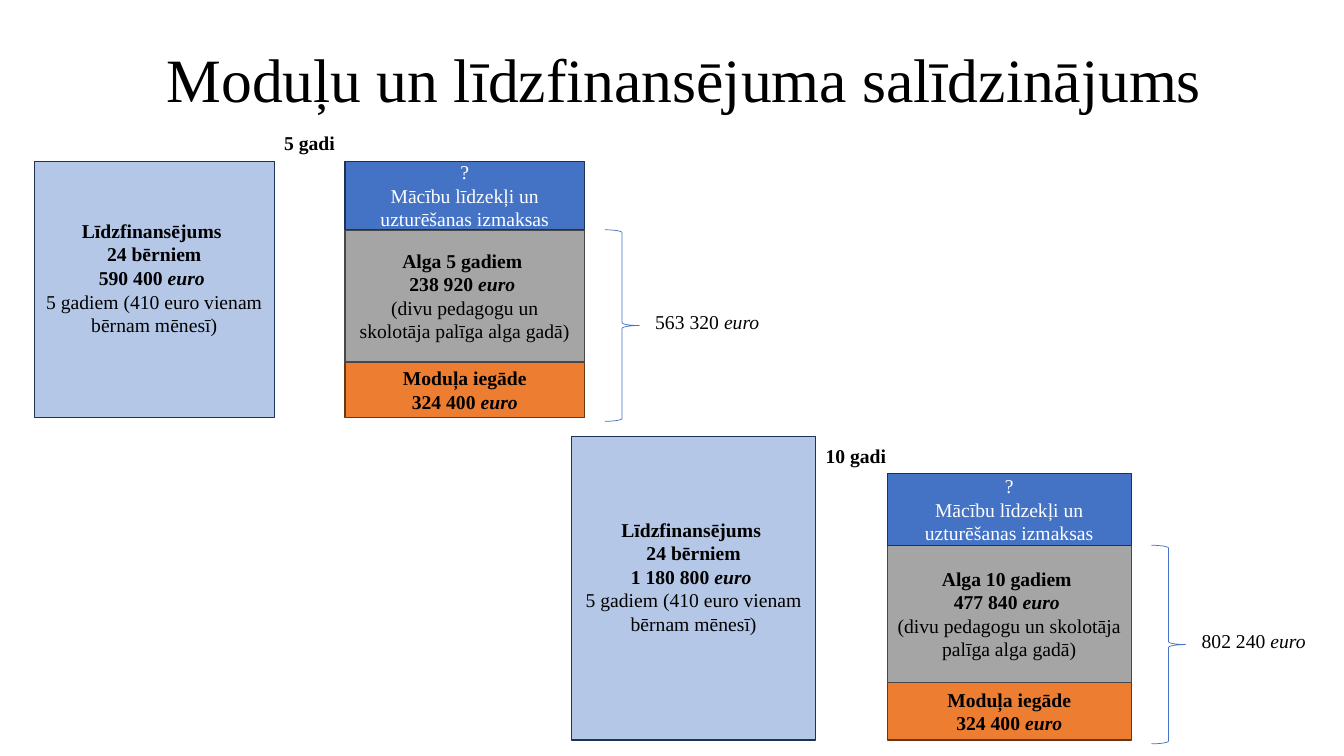
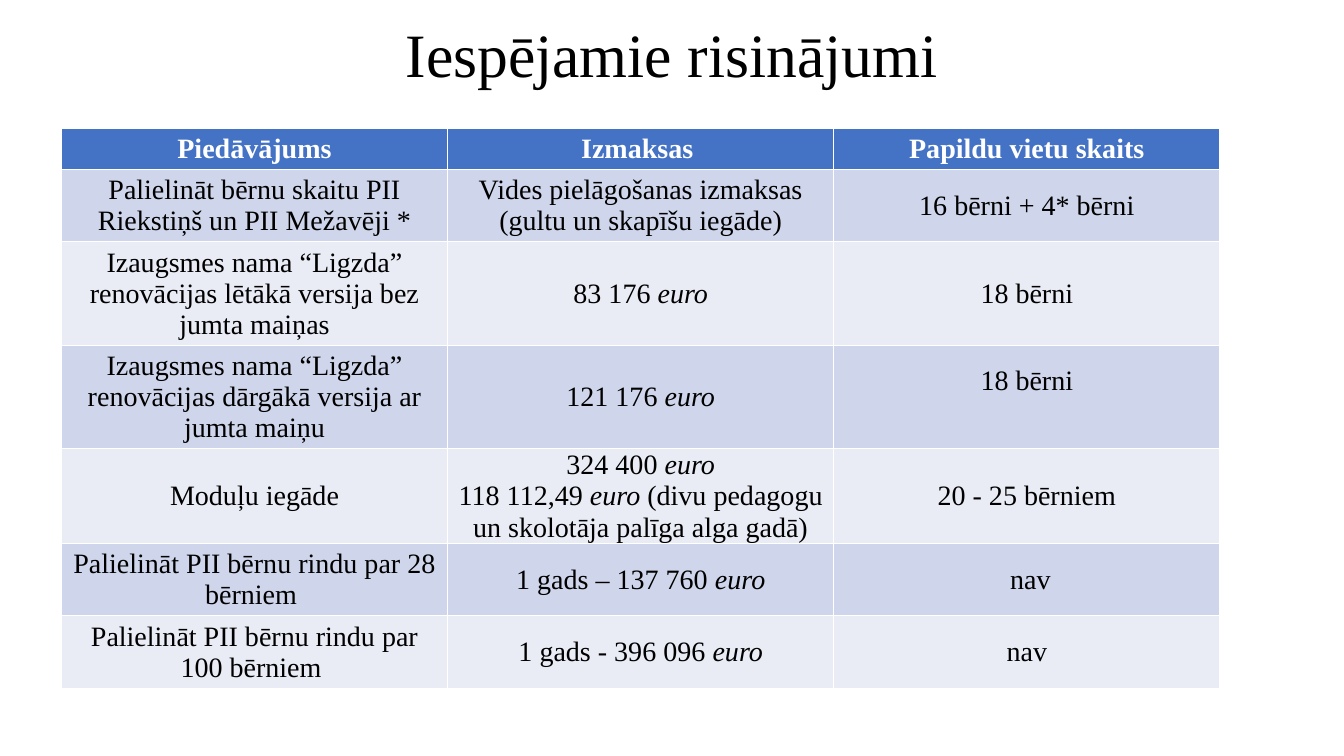
import dataclasses
import typing

import pptx
import pptx.dml.color
import pptx.enum.shapes
import pptx.enum.text
import pptx.util

EMU_PER_PX = 9144  # 100 px to the inch
FONT = "Times New Roman"
COLORS = {
    "white": "FFFFFF",
    "black": "000000",
    "light blue": "B4C7E7",
    "blue": "4472C4",
    "dark blue": "1E3256",
    "gray": "A5A5A5",
    "dark gray": "484848",
    "orange": "ED7D31",
    "brown": "683715",
    "odd row": "CFD5EA",
    "even row": "E9EBF5",
}
MIDDLE = pptx.enum.text.MSO_ANCHOR.MIDDLE
CENTER = pptx.enum.text.PP_ALIGN.CENTER
LEFT = pptx.enum.text.PP_ALIGN.LEFT
SHAPES = pptx.enum.shapes.MSO_SHAPE


def px(length: float) -> pptx.util.Emu:
    return pptx.util.Emu(round(length * EMU_PER_PX))


def rgb(name: str) -> pptx.dml.color.RGBColor:
    return pptx.dml.color.RGBColor.from_string(COLORS[name])


class Box(typing.NamedTuple):
    left: int
    top: int
    width: int
    height: int

    def emu(self) -> list[pptx.util.Emu]:
        return [px(length) for length in self]


@dataclasses.dataclass(frozen=True)
class Line:
    """One paragraph; the parts between underscores are italic."""
    text: str
    bold: bool = False


@dataclasses.dataclass(frozen=True)
class TextStyle:
    size: int = 14
    color: str = "black"
    alignment: typing.Any = CENTER
    line_spacing: float = 1.0


@dataclasses.dataclass(frozen=True)
class Layer:
    height: int
    fill: str
    outline: str
    lines: list[Line]
    text_color: str = "black"


@dataclasses.dataclass(frozen=True)
class Comparison:
    """Co-financing block beside the stacked costs of the module."""
    period: str
    funding: Box
    gap: int
    stack_top: int
    layer_heights: tuple[int, int, int]
    funding_sum: str
    salary_title: str
    salary_sum: str
    total: str


@dataclasses.dataclass(frozen=True)
class Cell:
    lines: list[Line]
    margins: dict[str, int] = dataclasses.field(default_factory=dict)


TITLE_STYLE = TextStyle(size=44, line_spacing=0.9)
BLOCK_STYLE = TextStyle()
LABEL_STYLE = TextStyle(alignment=LEFT)
HEADER_STYLE = TextStyle(size=20, color="white")
BODY_STYLE = TextStyle(size=20)

COMPARISONS = [
    Comparison("5 gadi", Box(34, 160, 238, 254), 70, 160, (68, 131, 55),
               "590 400", "Alga 5 gadiem ", "238 920", "563 320"),
    Comparison("10 gadi", Box(567, 433, 242, 301), 71, 470, (71, 136, 57),
               "1 180 800", "Alga 10 gadiem ", "477 840", "802 240"),
]


def plain(text: str, **margins: int) -> Cell:
    return Cell([Line(text)], margins)


TABLE_BOX = Box(61, 127, 1149, 555)
ROW_HEIGHTS = [41, 72, 102, 102, 94, 72, 72]
TABLE_ROWS = [
    [Cell([Line(heading, True)])
     for heading in ("Piedāvājums", "Izmaksas ", "Papildu vietu skaits")],
    [plain("Palielināt bērnu skaitu PII Riekstiņš un PII Mežavēji *"),
     plain("Vides pielāgošanas izmaksas (gultu un skapīšu iegāde)"),
     plain("16 bērni + 4* bērni")],
    [plain("Izaugsmes nama “Ligzda” renovācijas lētākā versija bez jumta maiņas"),
     plain("83 176 _euro_"),
     plain("18 bērni")],
    [plain("Izaugsmes nama “Ligzda” renovācijas dārgākā versija ar jumta maiņu"),
     plain("121 176 _euro_"),
     plain("18 bērni", margin_bottom=36)],
    [plain("Moduļu iegāde"),
     Cell([Line("324 400 _euro_"),
           Line("118 112,49 _euro_ (divu pedagogu un skolotāja palīga alga gadā)")],
          {"margin_left": 1, "margin_top": 1, "margin_right": 1, "margin_bottom": 0}),
     plain("20 - 25 bērniem")],
    [plain("Palielināt PII bērnu rindu par 28 bērniem "),
     plain("1 gads – 137 760 _euro_"),
     plain(" nav")],
    [plain("Palielināt PII bērnu rindu par 100 bērniem "),
     plain("1 gads - 396 096 _euro_"),
     plain("nav")],
]


def apply_format(target: typing.Any, values: dict[str, typing.Any]) -> None:
    for name, value in values.items():
        setattr(target, name, value)


def write_lines(frame: typing.Any, lines: list[Line], style: TextStyle) -> None:
    for index, line in enumerate(lines):
        paragraph = frame.add_paragraph() if index else frame.paragraphs[0]
        apply_format(paragraph, {"alignment": style.alignment,
                                 "line_spacing": style.line_spacing})
        for position, text in enumerate(line.text.split("_")):
            if not text:
                continue
            run = paragraph.add_run()
            run.text = text
            apply_format(run.font, {"name": FONT, "size": pptx.util.Pt(style.size),
                                    "bold": line.bold, "italic": position % 2 == 1})
            run.font.color.rgb = rgb(style.color)


def add_titled_slide(presentation: typing.Any, title: str, box: Box) -> typing.Any:
    slide = presentation.slides.add_slide(presentation.slide_layouts[5])
    shape = slide.shapes.title
    apply_format(shape, dict(zip(("left", "top", "width", "height"), box.emu())))
    apply_format(shape.text_frame, {"auto_size": pptx.enum.text.MSO_AUTO_SIZE.NONE,
                                    "vertical_anchor": MIDDLE, "word_wrap": True})
    write_lines(shape.text_frame, [Line(title)], TITLE_STYLE)
    return slide


def add_outlined(slide: typing.Any, preset: typing.Any, box: Box,
                 outline: str, weight: float) -> typing.Any:
    shape = slide.shapes.add_shape(preset, *box.emu())
    shape.shadow.inherit = False
    shape.line.color.rgb = rgb(outline)
    shape.line.width = pptx.util.Pt(weight)
    return shape


def add_block(slide: typing.Any, box: Box, layer: Layer, bottom_inset: int = 5) -> None:
    shape = add_outlined(slide, SHAPES.RECTANGLE, box, layer.outline, 1)
    shape.fill.solid()
    shape.fill.fore_color.rgb = rgb(layer.fill)
    apply_format(shape.text_frame, {"word_wrap": True, "vertical_anchor": MIDDLE,
                                    "margin_bottom": px(bottom_inset)})
    write_lines(shape.text_frame, layer.lines,
                dataclasses.replace(BLOCK_STYLE, color=layer.text_color))


def add_label(slide: typing.Any, box: Box, line: Line) -> None:
    frame = slide.shapes.add_textbox(*box.emu()).text_frame
    frame.word_wrap = True
    write_lines(frame, [line], LABEL_STYLE)


def add_comparison(slide: typing.Any, comparison: Comparison) -> None:
    funding = comparison.funding
    add_block(slide, funding, Layer(funding.height, "light blue", "dark blue", [
        Line("Līdzfinansējums ", True),
        Line("24 bērniem", True),
        Line(f"{comparison.funding_sum} _euro _", True),
        Line("5 gadiem (410 euro vienam bērnam mēnesī)"),
    ]), bottom_inset=28)

    upkeep, salary, purchase = comparison.layer_heights
    layers = [
        Layer(purchase, "orange", "brown", [
            Line("Moduļa iegāde", True), Line("324 400 _euro_", True)]),
        Layer(salary, "gray", "dark gray", [
            Line(comparison.salary_title, True),
            Line(f"{comparison.salary_sum} _euro _", True),
            Line("(divu pedagogu un skolotāja palīga alga gadā)")]),
        Layer(upkeep, "blue", "dark blue", [
            Line("?"), Line("Mācību līdzekļi un uzturēšanas izmaksas")], "white"),
    ]
    funding_right = funding.left + funding.width
    stack_left = funding_right + comparison.gap
    layer_top = funding.top + funding.height
    for layer in layers:
        layer_top -= layer.height
        add_block(slide, Box(stack_left, layer_top, funding.width, layer.height), layer)

    brace = Box(stack_left + funding.width + 20, comparison.stack_top + upkeep,
                34, salary + purchase + 4)
    add_outlined(slide, SHAPES.RIGHT_BRACE, brace, "blue", 0.5).fill.background()
    add_label(slide, Box(brace.left + 40, brace.top + brace.height // 2 - 20, 150, 34),
              Line(f"{comparison.total} _euro_"))
    add_label(slide, Box(funding_right, comparison.stack_top - 35, 203, 35),
              Line(comparison.period, True))


def add_solutions_table(slide: typing.Any) -> None:
    table = slide.shapes.add_table(len(TABLE_ROWS), len(TABLE_ROWS[0]),
                                   *TABLE_BOX.emu()).table
    for row_index, (height, cells) in enumerate(zip(ROW_HEIGHTS, TABLE_ROWS)):
        table.rows[row_index].height = px(height)
        if row_index == 0:
            fill, style = "blue", HEADER_STYLE
        else:
            fill, style = ("odd row" if row_index % 2 else "even row"), BODY_STYLE
        for column_index, content in enumerate(cells):
            cell = table.cell(row_index, column_index)
            cell.fill.solid()
            cell.fill.fore_color.rgb = rgb(fill)
            cell.vertical_anchor = MIDDLE
            apply_format(cell, {side: px(size) for side, size in content.margins.items()})
            write_lines(cell.text_frame, content.lines, style)


def main() -> None:
    presentation = pptx.Presentation()
    apply_format(presentation, {"slide_width": px(1333), "slide_height": px(750)})

    comparison_slide = add_titled_slide(
        presentation, "Moduļu un līdzfinansējuma salīdzinājums", Box(104, 9, 1150, 145))
    for comparison in COMPARISONS:
        add_comparison(comparison_slide, comparison)

    solutions_slide = add_titled_slide(
        presentation, "Iespējamie risinājumi", Box(105, 14, 1123, 86))
    add_solutions_table(solutions_slide)

    presentation.save("out.pptx")


if __name__ == "__main__":
    main()
